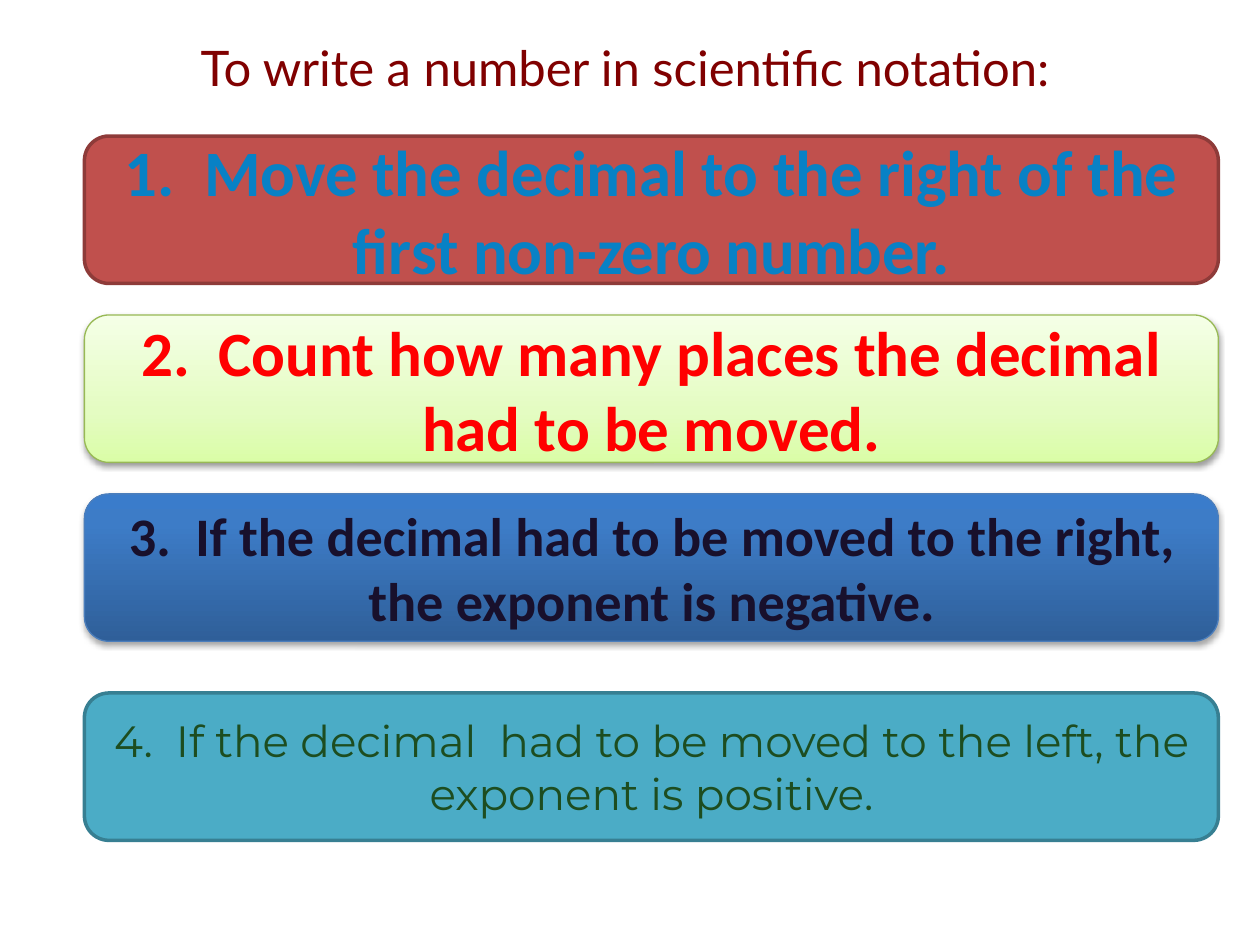
from copy import deepcopy

from lxml.etree import SubElement as Sub
from pptx import Presentation
from pptx.dml.color import RGBColor as Rgb
from pptx.enum.shapes import MSO_SHAPE as Shape
from pptx.enum.text import MSO_ANCHOR as Anchor, MSO_AUTO_SIZE as Fit, PP_ALIGN as Align
from pptx.oxml.ns import qn
from pptx.util import Inches, Pt

COLORS = {
    "title": "800000", "shadow": "000000",
    "red": "C0504D", "red_edge": "8E3B39", "blue_text": "0881C5",
    "lime_low": "DAFDA7", "lime_mid": "E4FCC2", "lime_top": "F5FFE7",
    "lime_edge": "98B955", "red_text": "FF0000",
    "blue_low": "2F5F99", "blue_mid": "3D7CC7", "blue_top": "3A7CCB",
    "blue_edge": "4B7EBC", "dark_text": "18102C",
    "teal": "4BACC6", "teal_edge": "377F92", "green_text": "1D4D20",
}


def color(name):
    return Rgb.from_string(COLORS[name])


def write(frame, text, size, tint, font="Calibri", bold=False, anchor=Anchor.MIDDLE):
    frame.word_wrap = True
    frame.vertical_anchor = anchor
    par = frame.paragraphs[0]
    par.alignment = Align.CENTER
    run = par.add_run()
    run.text = text
    run.font.name, run.font.size, run.font.bold = font, Pt(size), bold
    run.font.color.rgb = color(tint)


class Deck:
    left, width, height = Inches(0.67), Inches(9), Inches(1.17)

    def __init__(self):
        self.prs = Presentation()
        self.prs.slide_width, self.prs.slide_height = Inches(10), Inches(7.5)
        self.slide = self.prs.slides.add_slide(self.prs.slide_layouts[5])

    def title(self, text):
        box = self.slide.shapes.title
        box.left, box.top = Inches(0.25), Inches(0.25)
        box.width, box.height = Inches(9.42), Inches(0.57)
        write(box.text_frame, text, 28, "title", font="Lato", anchor=Anchor.TOP)
        box.text_frame.auto_size = Fit.SHAPE_TO_FIT_TEXT

    def step(self, top, text, fill, edge, weight, shade=None, **style):
        box = self.slide.shapes.add_shape(
            Shape.ROUNDED_RECTANGLE, self.left, Inches(top), self.width, self.height)
        if isinstance(fill, str):
            box.fill.solid()
            box.fill.fore_color.rgb = color(fill)
        else:
            self.blend(box, fill)
        box.line.color.rgb = color(edge)
        box.line.width = Pt(weight)
        box.shadow.inherit = False
        if shade:
            self.shade(box, *shade)
        write(box.text_frame, text, **style)

    def blend(self, box, stops):
        # Gradient from bottom to top; the template gradient has two stops
        box.fill.gradient()
        box.fill.gradient_angle = 90
        group = box._element.spPr.find(".//" + qn("a:gsLst"))
        while len(group) < len(stops):
            group.append(deepcopy(group[0]))
        for stop, (place, name) in zip(box.fill.gradient_stops, stops):
            stop.position = place
            stop.color.rgb = color(name)

    def shade(self, box, alpha, dist):
        # Soft shadow straight below the box
        effects = box._element.spPr.find(qn("a:effectLst"))
        outer = Sub(effects, qn("a:outerShdw"), blurRad=str(Pt(3.1)),
                    dist=str(Pt(dist)), dir="5400000", rotWithShape="0")
        tint = Sub(outer, qn("a:srgbClr"), val=COLORS["shadow"])
        Sub(tint, qn("a:alpha"), val=str(alpha * 1000))


def main():
    deck = Deck()

    # Heading
    deck.title("To write a number in scientific notation:")

    # Four steps
    deck.step(1.08, "1.  Move the decimal to the right of the first non-zero number.",
              "red", "red_edge", 2, size=37, tint="blue_text", bold=True)
    deck.step(2.5, "2.  Count how many places the decimal had to be moved.",
              [(0, "lime_low"), (0.35, "lime_mid"), (1, "lime_top")], "lime_edge", 0.75,
              shade=(38, 1.6), size=36, tint="red_text", bold=True)
    deck.step(3.92, "3.  If the decimal had to be moved to the right, the exponent is negative.",
              [(0, "blue_low"), (0.8, "blue_mid"), (1, "blue_top")], "blue_edge", 0.75,
              shade=(35, 1.8), size=31, tint="dark_text", bold=True)
    deck.step(5.5, "4.  If the decimal  had to be moved to the left, the exponent is positive.",
              "teal", "teal_edge", 2, size=25, tint="green_text", font="Montserrat")

    deck.prs.save("out.pptx")


if __name__ == "__main__":
    main()
